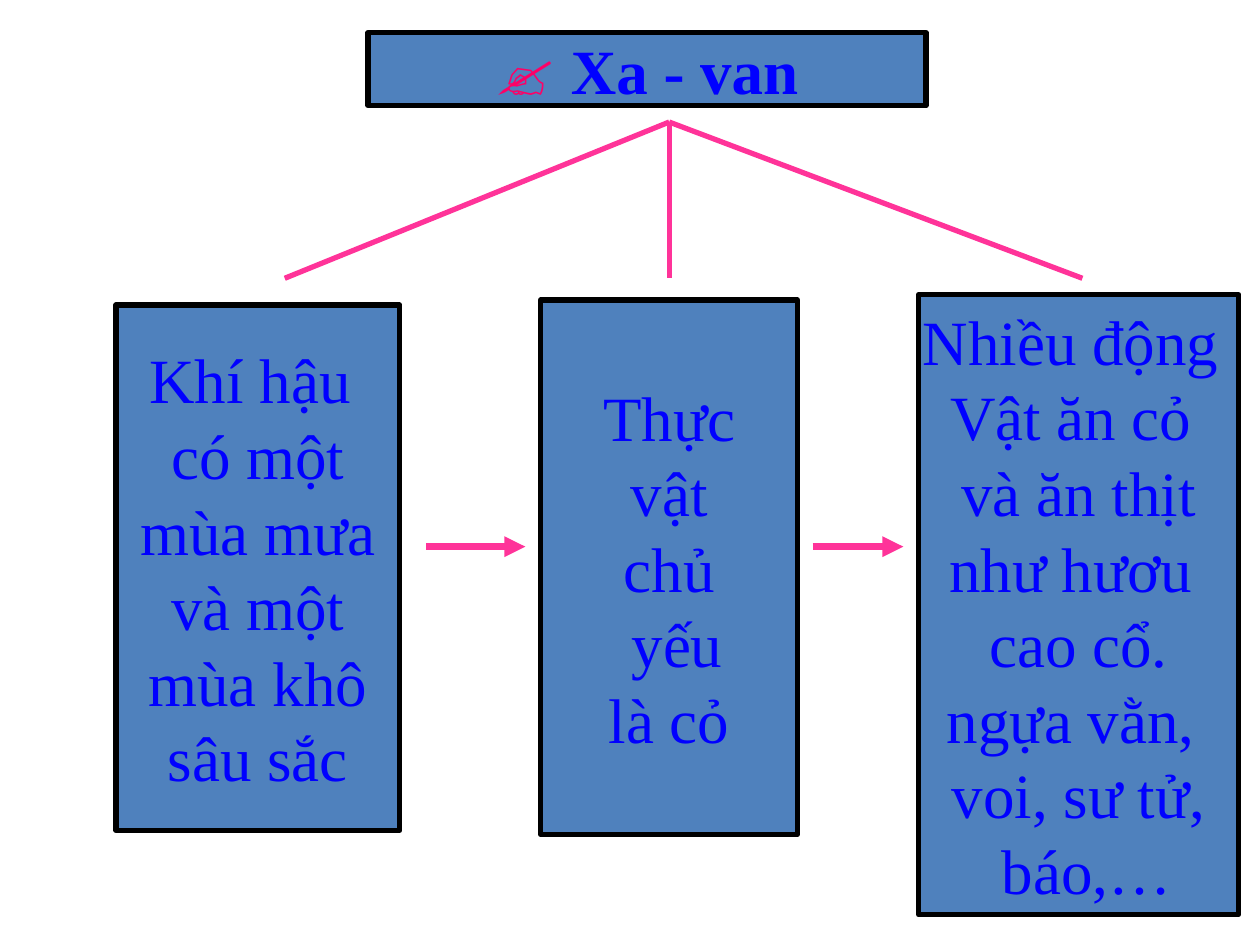
from lxml.etree import SubElement
from pptx import Presentation
from pptx.dml.color import RGBColor
from pptx.enum.shapes import MSO_CONNECTOR, MSO_SHAPE
from pptx.enum.text import MSO_ANCHOR, MSO_AUTO_SIZE, PP_ALIGN
from pptx.oxml.ns import qn
from pptx.util import Cm, Pt

BLUE = RGBColor(0x00, 0x00, 0xFF)
STEEL = RGBColor(0x4F, 0x81, 0xBD)
BLACK = RGBColor(0x00, 0x00, 0x00)
PINK = RGBColor(0xFF, 0x33, 0x99)
RED = RGBColor(0xFF, 0x00, 0x66)

SERIF = {"name": "Times New Roman", "size": Pt(36), "bold": False}
TITLE_RUNS = [
    ("✍ ", {"name": "Arial", "size": Pt(36), "bold": True}, RED),
    ("Xa - van", {**SERIF, "bold": True}, BLUE),
]
TITLE_BOX = (7.42, 0.66, 11.25, 1.47)  # left, top, width, height in cm

# Each feature of the savanna: its box in cm and its lines of text
FEATURES = [
    ((2.34, 6.15, 5.72, 10.59),
     ["Khí hậu ", "có một", " mùa mưa ", "và một", " mùa khô ", "sâu sắc"]),
    ((10.9, 6.05, 5.18, 10.77),
     ["Thực", " vật ", "chủ", " yếu", " là cỏ "]),
    ((18.52, 5.94, 6.45, 12.5),
     ["Nhiều động ", "Vật ăn cỏ ", "và ăn thịt", "như hươu ", "cao cổ.",
      "ngựa vằn, ", "voi, sư tử,", " báo,…"]),
]
BRANCH_START = (13.49, 2.46)
BRANCH_END_XS, BRANCH_END_Y = (5.74, 13.49, 21.82), 5.61
ARROW_SPANS, ARROW_Y = [(8.59, 10.59), (16.38, 18.21)], 11.02


def style_box(sp, box):
    for name, value in zip(("left", "top", "width", "height"), box):
        setattr(sp, name, Cm(value))
    sp.fill.solid()
    sp.fill.fore_color.rgb = STEEL
    sp.line.color.rgb = BLACK
    sp.line.width = Pt(3)
    tf = sp.text_frame
    frame = {"word_wrap": False, "auto_size": MSO_AUTO_SIZE.NONE,
             "vertical_anchor": MSO_ANCHOR.MIDDLE}
    for name, value in frame.items():
        setattr(tf, name, value)
    return tf


def add_run(p, text, font, color):
    p.alignment = PP_ALIGN.CENTER
    r = p.add_run()
    r.text = text
    for name, value in font.items():
        setattr(r.font, name, value)
    r.font.color.rgb = color


def add_line(shapes, start, end, width, arrow=False):
    line = shapes.add_connector(MSO_CONNECTOR.STRAIGHT,
                                *(Cm(v) for v in (*start, *end)))
    line.line.color.rgb = PINK
    line.line.width = Pt(width)
    if arrow:
        SubElement(line.line._get_or_add_ln(), qn("a:tailEnd"), type="triangle")
    SubElement(line._element.spPr, qn("a:effectLst"))


prs = Presentation()
prs.slide_width, prs.slide_height = Cm(25.4), Cm(19.05)
s = prs.slides.add_slide(prs.slide_layouts[5])

title_p = style_box(s.shapes.title, TITLE_BOX).paragraphs[0]
for text, font, color in TITLE_RUNS:
    add_run(title_p, text, font, color)

for x1, x2 in ARROW_SPANS:
    add_line(s.shapes, (x1, ARROW_Y), (x2, ARROW_Y), 4, arrow=True)

branches = s.shapes.add_group_shape()
for x in BRANCH_END_XS:
    add_line(branches.shapes, BRANCH_START, (x, BRANCH_END_Y), 3)

for box, lines in FEATURES:
    sp = s.shapes.add_shape(MSO_SHAPE.RECTANGLE, *(Cm(v) for v in box))
    sp.shadow.inherit = False
    tf = style_box(sp, box)
    for i, text in enumerate(lines):
        p = tf.add_paragraph() if i else tf.paragraphs[0]
        p.line_spacing = Pt(43.2)
        add_run(p, text, SERIF, BLUE)

prs.save("out.pptx")
